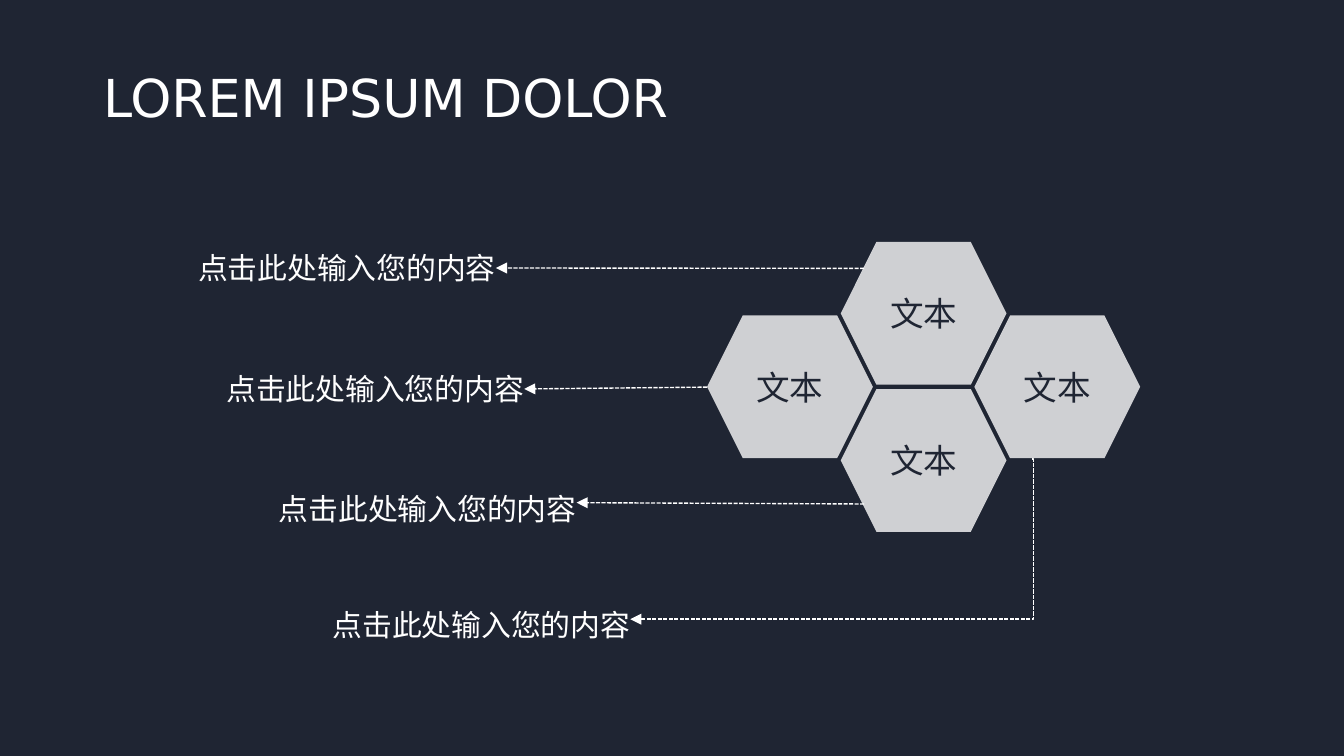
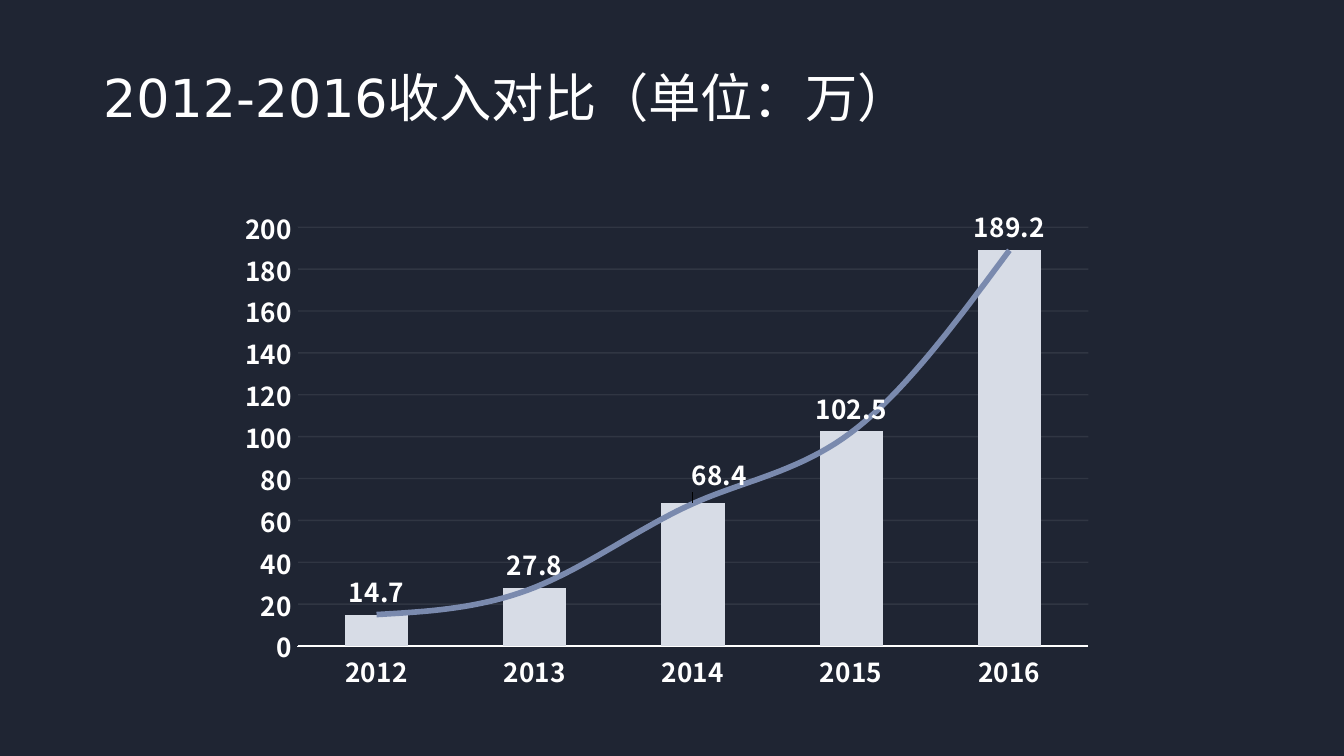
import pptx
import pptx.chart.data
import pptx.dml.color
import pptx.enum.chart
import pptx.enum.dml
import pptx.enum.shapes
import pptx.enum.text
import pptx.oxml
import pptx.oxml.ns
import pptx.util
from lxml import etree

Pt = pptx.util.Pt
qn = pptx.oxml.ns.qn
ALIGN = pptx.enum.text.PP_ALIGN
CONNECTOR = pptx.enum.shapes.MSO_CONNECTOR

NIGHT = "1F2533"
WHITE = "FFFFFF"
PALE = "D7DCE6"
SLATE = "7A8AAE"
SANS = "DejaVu Sans"
CHART_SANS = "Noto Sans CJK SC"

HEXAGON_WIDTH, HEXAGON_HEIGHT = 88.8, 76.5
HEXAGON_LEFT, HEXAGON_TOP = 378.8, 129.6
COLUMN_STEP, ROW_STEP = 71.6, 39.4
HEXAGON_CELLS = [(2, 1), (1, 2), (1, 0), (0, 1)]
LABEL_WIDTH, LABEL_HEIGHT = 181.4, 51.8


def rgb(color):
    return pptx.dml.color.RGBColor.from_string(color)


def paint(fill, color):
    fill.solid()
    fill.fore_color.rgb = rgb(color)


def draw_line(line, color, width=0.75):
    paint(line.fill, color)
    line.width = Pt(width)


def set_opacity(element, percent):
    color = next(element.iter(qn("a:srgbClr")))
    etree.SubElement(color, qn("a:alpha"), val=str(percent * 1000))


def style_font(font, size, color, name, bold=False):
    font.size = Pt(size)
    font.name = name
    font.bold = bold
    font.color.rgb = rgb(color)


def write(shape, text, size, color, name, align=ALIGN.LEFT, inset=0, spacing=None):
    frame = shape.text_frame
    frame.word_wrap = True
    frame.vertical_anchor = pptx.enum.text.MSO_ANCHOR.MIDDLE
    frame.margin_left = frame.margin_right = Pt(inset)
    frame.margin_top = frame.margin_bottom = Pt(0)
    para = frame.paragraphs[0]
    para.alignment = align
    para.line_spacing = spacing
    span = para.add_run()
    span.text = text
    style_font(span.font, size, color, name)


def add_page(deck, title):
    page = deck.slides.add_slide(deck.slide_layouts[6])
    paint(page.background.fill, NIGHT)
    box = page.shapes.add_textbox(Pt(48.2), Pt(26.6), Pt(635.8), Pt(50.4))
    write(box, title, 28, WHITE, SANS, inset=7.2)
    return page


def add_label(page, right, top, spacing):
    box = page.shapes.add_textbox(
        Pt(right - LABEL_WIDTH), Pt(top), Pt(LABEL_WIDTH), Pt(LABEL_HEIGHT)
    )
    write(box, "点击此处输入您的内容", 16, WHITE, "Arial", ALIGN.RIGHT, spacing=spacing)
    return box


def add_arrow(page, start, end, kind=CONNECTOR.STRAIGHT):
    arrow = page.shapes.add_connector(kind, *(Pt(value) for value in start + end))
    draw_line(arrow.line, WHITE)
    arrow.line.dash_style = pptx.enum.dml.MSO_LINE.SQUARE_DOT
    properties = arrow._element.spPr
    etree.SubElement(properties.find(qn("a:ln")), qn("a:tailEnd"), type="triangle")
    etree.SubElement(properties, qn("a:effectLst"))
    return arrow


def add_elbow_arrow(page, start, end):
    arrow = add_arrow(page, start, end, CONNECTOR.ELBOW)
    geometry = arrow._element.spPr.find(qn("a:prstGeom"))
    guides = geometry.find(qn("a:avLst"))
    etree.SubElement(guides, qn("a:gd"), name="adj1", fmla="val -400")


def add_hexagon(page, column, row):
    hexagon = page.shapes.add_shape(
        pptx.enum.shapes.MSO_SHAPE.HEXAGON,
        Pt(HEXAGON_LEFT + column * COLUMN_STEP),
        Pt(HEXAGON_TOP + row * ROW_STEP),
        Pt(HEXAGON_WIDTH),
        Pt(HEXAGON_HEIGHT),
    )
    hexagon.shadow.inherit = False
    paint(hexagon.fill, WHITE)
    set_opacity(hexagon._element.spPr, 79)
    hexagon.line.fill.background()
    write(hexagon, "文本", 18, NIGHT, SANS, ALIGN.CENTER)


def manual_layout(**settings):
    layout = pptx.oxml.parse_xml(f"<c:layout {pptx.oxml.ns.nsdecls('c')}/>")
    manual = etree.SubElement(layout, qn("c:manualLayout"))
    for name, value in settings.items():
        etree.SubElement(manual, qn(f"c:{name}"), val=str(value))
    return layout


def move_last_series_to_line(chart):
    bars = chart.plots[0]._element
    series = bars.findall(qn("c:ser"))[-1]
    for setting in series.findall(qn("c:invertIfNegative")):
        series.remove(setting)
    lines = pptx.oxml.parse_xml(
        f"<c:lineChart {pptx.oxml.ns.nsdecls('c')}>"
        '<c:grouping val="standard"/><c:varyColors val="0"/></c:lineChart>'
    )
    lines.append(series)
    etree.SubElement(lines, qn("c:marker"), val="1")
    for axis in bars.findall(qn("c:axId")):
        etree.SubElement(lines, qn("c:axId"), val=axis.get("val"))
    bars.addnext(lines)


def style_axis(axis, color):
    ticks = pptx.enum.chart.XL_TICK_MARK.NONE
    axis.major_tick_mark = axis.minor_tick_mark = ticks
    style_font(axis.tick_labels.font, 14, WHITE, CHART_SANS, True)
    draw_line(axis.format.line, color)


def style_value_axis(axis):
    style_axis(axis, NIGHT)
    axis.minimum_scale, axis.maximum_scale, axis.major_unit = 0, 200, 20
    axis.has_major_gridlines = True
    draw_line(axis.major_gridlines.format.line, WHITE)
    set_opacity(axis._element.find(qn("c:majorGridlines")), 8)


def style_bars(plot):
    plot.gap_width = 150
    plot.vary_by_categories = False
    bars = plot.series[0]
    bars.invert_if_negative = False
    paint(bars.format.fill, PALE)
    outside = pptx.enum.chart.XL_LABEL_POSITION.OUTSIDE_END
    labels = bars.data_labels
    labels.show_value = True
    shifted = bars.points[2].data_label
    for label in (labels, shifted):
        style_font(label.font, 14, WHITE, CHART_SANS, True)
        label.position = outside
    for element in labels._element.findall(qn("c:dLbl")):
        element.find(qn("c:idx")).addnext(manual_layout(x=0.03, y=-0.01))


def style_trend(plot):
    trend = plot.series[0]
    trend.smooth = True
    trend.marker.style = pptx.enum.chart.XL_MARKER_STYLE.NONE
    draw_line(trend.format.line, SLATE, 3)


def add_income_chart(page):
    data = pptx.chart.data.CategoryChartData()
    data.categories = ["2012", "2013", "2014", "2015", "2016"]
    data.add_series("Series 1", (14.7, 27.8, 68.4, 102.5, 189.2))
    data.add_series("Series 2", (15, 28, 68, 102, 189))
    chart = page.shapes.add_chart(
        pptx.enum.chart.XL_CHART_TYPE.COLUMN_CLUSTERED,
        Pt(121.7), Pt(105.8), Pt(470.9), Pt(267.1), data,
    ).chart
    chart.has_legend = False
    chart.has_title = False
    style_font(chart.font, 10, WHITE, SANS)
    move_last_series_to_line(chart)
    style_axis(chart.category_axis, WHITE)
    style_value_axis(chart.value_axis)
    bars, lines = chart.plots
    style_bars(bars)
    style_trend(lines)
    area = bars._element.getparent()
    for layout in area.findall(qn("c:layout")):
        area.remove(layout)
    area.insert(0, manual_layout(
        layoutTarget="inner", xMode="edge", yMode="edge", x=0.08, y=0.06, w=0.9, h=0.84
    ))


def build_hexagon_page(deck):
    page = add_page(deck, "LOREM IPSUM DOLOR")
    first = add_label(page, 265.7, 117.7, None)
    second = add_label(page, 280.8, 182.5, None)
    add_label(page, 308.9, 244.8, 1.2)
    add_label(page, 337.7, 306.7, 1.2)
    add_arrow(page, (463, 143.8), (265.7, 143.6)).end_connect(first, 3)
    add_arrow(page, (378.8, 207.4), (280.8, 208.4)).end_connect(second, 3)
    add_arrow(page, (463, 270), (308.9, 269.3))
    add_elbow_arrow(page, (553, 245.9), (337.7, 331.7))
    for column, row in HEXAGON_CELLS:
        add_hexagon(page, column, row)


def build_income_page(deck):
    page = add_page(deck, "2012-2016收入对比（单位：万）")
    add_income_chart(page)


def main():
    deck = pptx.Presentation()
    deck.slide_width, deck.slide_height = Pt(720), Pt(405)
    build_hexagon_page(deck)
    build_income_page(deck)
    deck.save("out.pptx")


if __name__ == "__main__":
    main()
